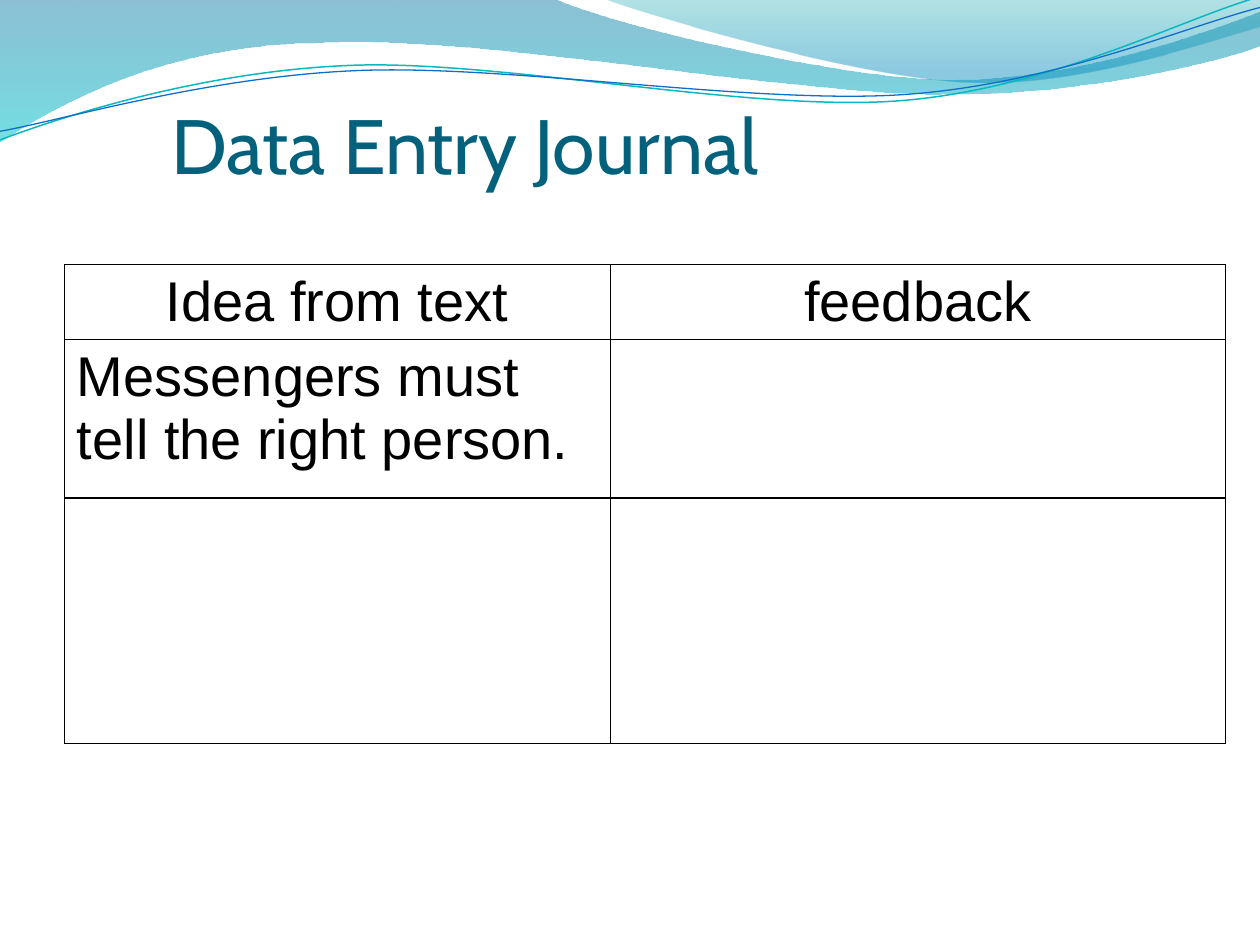
from lxml import etree
from pptx import Presentation
from pptx.dml.color import RGBColor
from pptx.enum.text import MSO_ANCHOR, MSO_AUTO_SIZE, PP_ALIGN
from pptx.oxml.ns import qn
from pptx.util import Pt

TOP, LEFT, CENTER = MSO_ANCHOR.TOP, PP_ALIGN.LEFT, PP_ALIGN.CENTER
NO_FIT = MSO_AUTO_SIZE.NONE
TITLE_ONLY = 5
TILT = 357.3

COLORS = {
    "title": "04617B", "text": "000000", "rule": "000000",
    "deep": "0074A1", "aqua": "00C6CF", "teal": "00A1A9", "sky": "008BBF",
    "teal line": "0AB8BF", "blue line": "0F6FC6",
}

# Outlines in points: a start, then lines (x, y) or curves (two handles, end)
BAND = [(0, -0.7), (316.8, -0.7),
        (342.7, 12.2, 478.1, 45.4, 545.8, 45.4),
        (614.2, 45.4, 689.8, 18.7, 720, 6.5), (720.7, 25.9),
        (707.8, 31.7, 626.4, 54.7, 537.1, 54),
        (447.8, 54, 275, 20.2, 185, 24.5),
        (92.9, 25.2, 33.1, 59.8, -0.7, 81.4)]
CREST = [(344.9, -0.7), (366.5, 7.9, 491, 44.6, 553.7, 46.8),
         (616.3, 49.7, 691.9, 23, 720, 15.1), (720, 0)]
UPPER = [(-1.4, 63), (33.8, 51.7, 114.1, 29.4, 199.8, 29.9),
         (284.9, 30.3, 425.8, 67.3, 512.4, 64.9),
         (599, 62.4, 676.5, 25.7, 720.2, 15.5)]
LOWER = [(-1.1, 58), (32.9, 53.8, 118.3, 32.5, 204.1, 33),
         (290.6, 33.4, 428.9, 63.1, 515.5, 61.4),
         (601.3, 59.6, 678.5, 30.1, 721.4, 21.3)]

# Gradient stops: position, colour, opacity in percent
FILLS = [(BAND, [(0, "deep", 45), (1, "aqua", 55)]),
         (CREST, [(0, "teal", 30), (0.8, "sky", 45)])]
LINES = [(UPPER, "teal line", 0.85), (LOWER, "blue line", 0.75)]

ROWS = [["Idea from text", "feedback"],
        ["Messengers must tell the right person.", ""],
        ["", ""]]
WIDTHS = [312, 351.5]
HEIGHTS = [42.9, 90.7, 140.4]


def rgb(name):
    return RGBColor.from_string(COLORS[name])


def apply(item, values):
    for name, value in values.items():
        setattr(item, name, value)


def add_path(slide, path, close):
    """Lay out all points as lines, then bend each group of three."""
    spots = [(Pt(part[i]), Pt(part[i + 1]))
             for part in path for i in range(0, len(part), 2)]
    pen = slide.shapes.build_freeform(*spots[0])
    pen.add_line_segments(spots[1:], close=close)
    shape = pen.convert_to_shape()
    shape.shadow.inherit = False
    lines = iter(list(shape._element.iter(qn("a:lnTo"))))
    for part in path[1:]:
        group = [next(lines) for _ in range(len(part) // 2)]
        if len(group) == 3:
            curve = etree.Element(qn("a:cubicBezTo"))
            group[0].addprevious(curve)
            for line in group:
                curve.append(line[0])
                line.getparent().remove(line)
    return shape


def add_wave(slide, path, stops):
    shape = add_path(slide, path, True)
    shape.line.fill.background()
    shape.fill.gradient()
    shape.fill.gradient_angle = 270
    for stop, (place, name, _) in zip(shape.fill.gradient_stops, stops):
        stop.position = place
        stop.color.rgb = rgb(name)
    tones = shape._element.spPr.iter(qn("a:srgbClr"))
    for tone, (_, _, alpha) in zip(tones, stops):
        etree.SubElement(tone, qn("a:alpha"), val=str(alpha * 1000))


def add_curve(slide, path, name, width):
    shape = add_path(slide, path, False)
    shape.rotation = TILT
    shape.fill.background()
    shape.line.color.rgb = rgb(name)
    shape.line.width = Pt(width)


def write(para, text, font, size, name, align):
    para.alignment = align
    run = para.add_run()
    run.text = text
    apply(run.font, {"name": font, "size": Pt(size), "bold": False})
    run.font.color.rgb = rgb(name)


def add_title(slide, text):
    title = slide.shapes.title
    apply(title, {"left": Pt(90.7), "top": Pt(48.7),
                  "width": Pt(613.4), "height": Pt(90)})
    frame = title.text_frame
    apply(frame, {"word_wrap": True, "auto_size": NO_FIT, "vertical_anchor": TOP})
    sides = ("left", "right", "top", "bottom")
    apply(frame, {f"margin_{side}": Pt(7.2) for side in sides})
    write(frame.paragraphs[0], text, "Cabin", 44, "title", LEFT)


def add_border(cell):
    props = cell._tc.get_or_add_tcPr()
    for spot, side in enumerate(("lnL", "lnR", "lnT", "lnB")):
        line = etree.Element(qn(f"a:{side}"), w=str(Pt(1)))
        fill = etree.SubElement(line, qn("a:solidFill"))
        etree.SubElement(fill, qn("a:srgbClr"), val=COLORS["rule"])
        props.insert(spot, line)


def add_grid(slide):
    frame = slide.shapes.add_table(len(ROWS), len(WIDTHS), Pt(36.8), Pt(151),
                                   Pt(sum(WIDTHS)), Pt(sum(HEIGHTS)))
    table = frame.table
    apply(table, {"first_row": False, "horz_banding": False})
    for col, width in zip(table.columns, WIDTHS):
        col.width = Pt(width)
    for row, height in zip(table.rows, HEIGHTS):
        row.height = Pt(height)
    for r, texts in enumerate(ROWS):
        for c, text in enumerate(texts):
            cell = table.cell(r, c)
            cell.fill.background()
            apply(cell, {"margin_top": Pt(3.6), "margin_bottom": Pt(2)})
            add_border(cell)
            if text:
                write(cell.text_frame.paragraphs[0], text, "Arial", 32,
                      "text", LEFT if r else CENTER)


def main():
    deck = Presentation()
    apply(deck, {"slide_width": Pt(720), "slide_height": Pt(540)})
    slide = deck.slides.add_slide(deck.slide_layouts[TITLE_ONLY])
    # Wave banner
    for path, stops in FILLS:
        add_wave(slide, path, stops)
    for path, name, width in LINES:
        add_curve(slide, path, name, width)
    # Title and journal
    add_title(slide, "Data Entry Journal")
    add_grid(slide)
    deck.save("out.pptx")


if __name__ == "__main__":
    main()
